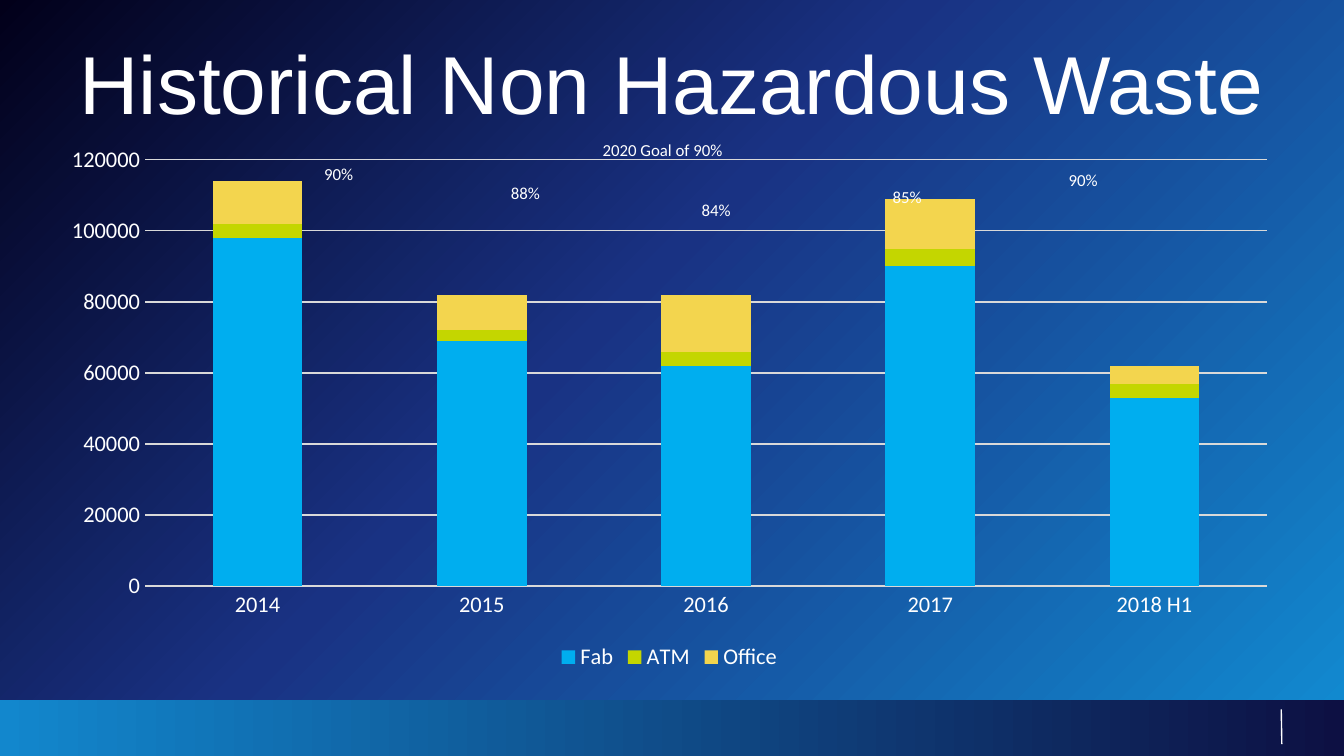
import pptx
import pptx.chart.data
import pptx.dml.color
import pptx.enum.chart
import pptx.enum.shapes
import pptx.enum.text
import pptx.oxml.ns
import pptx.util
from lxml import etree

Pt = pptx.util.Pt
qn = pptx.oxml.ns.qn
RGB = pptx.dml.color.RGBColor.from_string

theme = {
    "white": "FFFFFF", "grid": "D9D9D9",
    "background": [(0, "02001A"), (44, "193283"), (100, "118DD3")],
    "footer": [(0, "1287CD"), (100, "0D1043")],
    "series": ["00AEEF", "C4D600", "F3D54E"],
    "title_font": "Arial", "body_font": "Calibri",
    "title_size": 44, "axis_size": 12, "label_size": 9,
}


def format_font(font, name, size):
    for attribute, value in {"name": name, "size": Pt(size)}.items():
        setattr(font, attribute, value)
    font.color.rgb = RGB(theme["white"])


def apply_gradient(fill, element, stops, angle):
    fill.gradient()
    fill.gradient_angle = (360 - angle) % 360
    stop_list = next(element.iter(qn("a:gsLst")))
    for stop in list(stop_list):
        stop_list.remove(stop)
    for position, color in stops:
        stop = etree.SubElement(stop_list, qn("a:gs"), pos=str(position * 1000))
        etree.SubElement(stop, qn("a:srgbClr"), val=color)


presentation = pptx.Presentation()
presentation.slide_width = Pt(720)
presentation.slide_height = Pt(405)
slide = presentation.slides.add_slide(presentation.slide_layouts[5])
apply_gradient(slide.background.fill, slide.element, theme["background"], 45)

footer = slide.shapes.add_shape(
    pptx.enum.shapes.MSO_SHAPE.RECTANGLE, Pt(0), Pt(375), Pt(720), Pt(30))
footer.shadow.inherit = False
footer.line.fill.background()
apply_gradient(footer.fill, footer.element, theme["footer"], 0)

divider = slide.shapes.add_connector(
    pptx.enum.shapes.MSO_CONNECTOR.STRAIGHT, Pt(686.4), Pt(380), Pt(686.7), Pt(398.7))
divider.line.color.rgb = RGB(theme["white"])
divider.line.width = Pt(0.75)
etree.SubElement(divider.element.spPr, qn("a:effectLst"))

chart_data = pptx.chart.data.CategoryChartData()
chart_data.categories = ["2014", "2015", "2016", "2017", "2018 H1"]
waste = {
    "Fab": [98000, 69000, 62000, 90000, 53000],
    "ATM": [4000, 3000, 4000, 5000, 4000],
    "Office": [12000, 10000, 16000, 14000, 5000],
}
for name, values in waste.items():
    chart_data.add_series(name, values)
chart = slide.shapes.add_chart(
    pptx.enum.chart.XL_CHART_TYPE.COLUMN_STACKED,
    Pt(25.2), Pt(72.7), Pt(666.7), Pt(289.4), chart_data).chart
format_font(chart.font, theme["body_font"], theme["axis_size"])
chart.has_title = False
chart.has_legend = True
chart.legend.position = pptx.enum.chart.XL_LEGEND_POSITION.BOTTOM
chart.legend.include_in_layout = False
format_font(chart.legend.font, theme["body_font"], theme["axis_size"])

plot = chart.plots[0]
for attribute, value in {"gap_width": 150, "overlap": 100, "vary_by_categories": False}.items():
    setattr(plot, attribute, value)
for series, color in zip(plot.series, theme["series"]):
    series.format.fill.solid()
    series.format.fill.fore_color.rgb = RGB(color)

for axis in (chart.category_axis, chart.value_axis):
    axis.major_tick_mark = pptx.enum.chart.XL_TICK_MARK.NONE
    axis.format.line.fill.background()
    format_font(axis.tick_labels.font, theme["body_font"], theme["axis_size"])
for attribute, value in {"minimum_scale": 0, "maximum_scale": 120000, "major_unit": 20000}.items():
    setattr(chart.value_axis, attribute, value)
chart.value_axis.tick_labels.number_format = "General"
chart.value_axis.tick_labels.number_format_is_linked = False
grid_line = chart.value_axis.major_gridlines.format.line
grid_line.color.rgb = RGB(theme["grid"])
grid_line.width = Pt(0.75)

title = slide.shapes.title
for attribute, value in {"left": 36, "top": 14.4, "width": 648, "height": 58.3}.items():
    setattr(title, attribute, Pt(value))
title_format = {
    "margin_left": 0, "margin_right": 0, "margin_top": 0, "margin_bottom": 0,
    "word_wrap": True, "auto_size": pptx.enum.text.MSO_AUTO_SIZE.NONE,
    "vertical_anchor": pptx.enum.text.MSO_ANCHOR.MIDDLE,
}
for attribute, value in title_format.items():
    setattr(title.text_frame, attribute, value)
title.text_frame.text = "Historical Non Hazardous Waste"
title_paragraph = title.text_frame.paragraphs[0]
title_paragraph.alignment = pptx.enum.text.PP_ALIGN.CENTER
format_font(title_paragraph.font, theme["title_font"], theme["title_size"])

labels = [
    ("2020 Goal of 90%", 295.9, 71.3),
    ("84%", 324.7, 103.7),
    ("88%", 222.5, 94.3),
    ("90%", 122.4, 84.2),
    ("85%", 427, 96.5),
    ("90%", 521.3, 87.1),
]
for text, left, top in labels:
    label = slide.shapes.add_textbox(Pt(left), Pt(top), Pt(118), Pt(18))
    label.text_frame.word_wrap = True
    label.text_frame.text = text
    paragraph = label.text_frame.paragraphs[0]
    paragraph.alignment = pptx.enum.text.PP_ALIGN.CENTER
    format_font(paragraph.font, theme["body_font"], theme["label_size"])

presentation.save("out.pptx")
